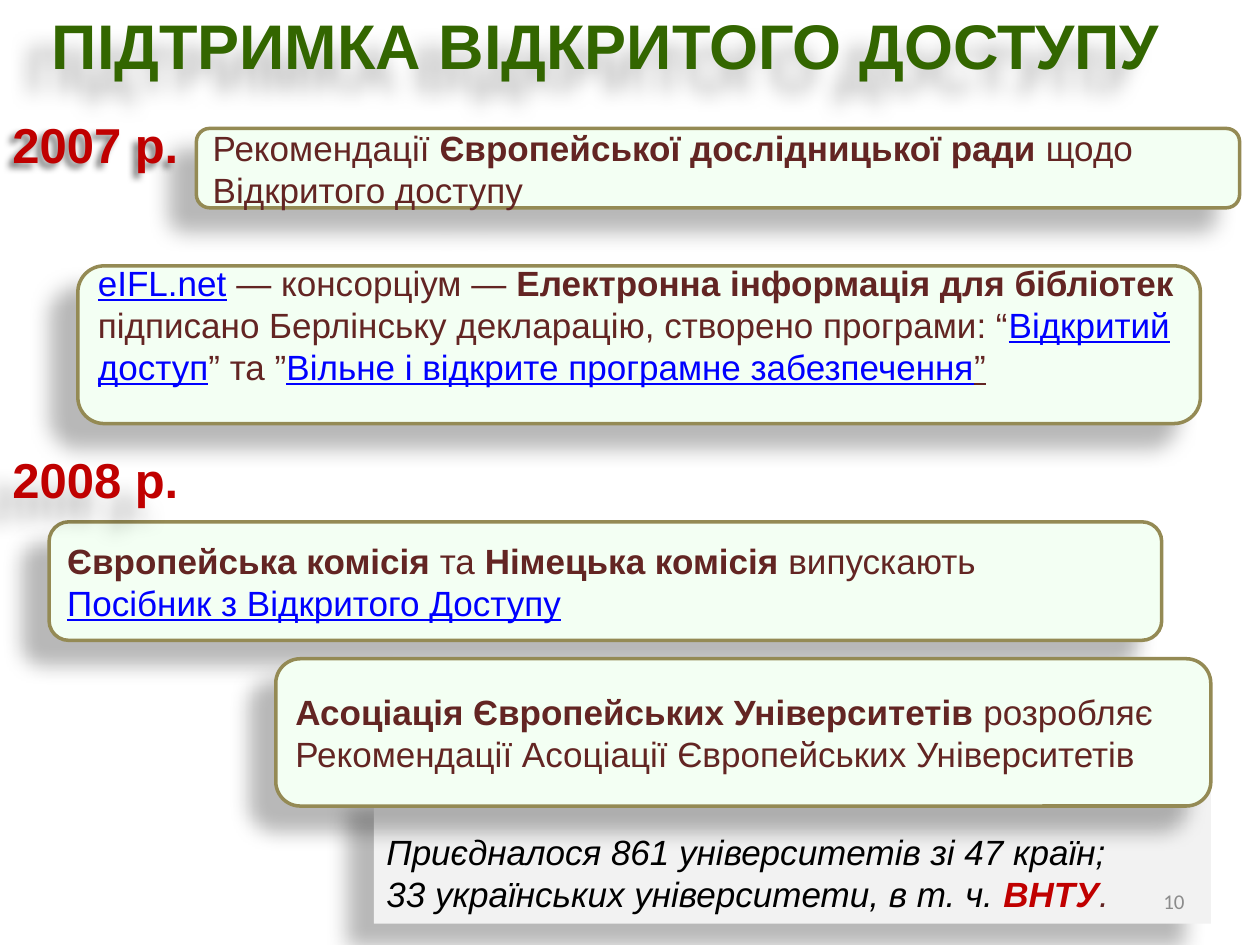
from lxml import etree
from pptx import Presentation
from pptx.dml.color import RGBColor
from pptx.enum.shapes import MSO_SHAPE
from pptx.enum.text import MSO_ANCHOR, MSO_AUTO_SIZE, PP_ALIGN
from pptx.oxml.ns import qn
from pptx.util import Cm, Pt

RECTANGLE = MSO_SHAPE.RECTANGLE
ROUNDED = MSO_SHAPE.ROUNDED_RECTANGLE
TOP, MIDDLE = MSO_ANCHOR.TOP, MSO_ANCHOR.MIDDLE
LEFT, RIGHT = PP_ALIGN.LEFT, PP_ALIGN.RIGHT
NO_FIT = MSO_AUTO_SIZE.NONE

GREEN = RGBColor(0x33, 0x66, 0x00)
RED = RGBColor(0xC0, 0x00, 0x00)
BROWN = RGBColor(0x63, 0x25, 0x23)
BLUE = RGBColor(0x00, 0x00, 0xFF)
BLACK = RGBColor(0x00, 0x00, 0x00)
GREY = RGBColor(0x8C, 0x8C, 0x8C)
PALE_GREY = RGBColor(0xF2, 0xF2, 0xF2)
MINT = RGBColor(0xF3, 0xFF, 0xF3)
OLIVE = RGBColor(0x94, 0x8A, 0x54)

PLAIN = {}
BOLD = {"bold": True}
LINK = {"color": BLUE, "underline": True}
UNDERLINED = {"underline": True}
ITALIC = {"color": BLACK, "italic": True}


class SlideBuilder:
    font = "Arial"
    body_size = 20

    def __init__(self, page):
        self.page = page

    def place(self, shape, left, top, width, height):
        shape.left, shape.top = Cm(left), Cm(top)
        shape.width, shape.height = Cm(width), Cm(height)

    def add_shadow(self, shape, blur=11.8, distance=19.7, opacity=28):
        shape.shadow.inherit = False
        effects = shape._element.spPr.find(qn("a:effectLst"))
        shadow = etree.SubElement(
            effects, qn("a:outerShdw"), blurRad=str(Pt(blur)),
            dist=str(Pt(distance)), dir=str(141 * 60000),
            algn="ctr", rotWithShape="0")
        color = etree.SubElement(shadow, qn("a:srgbClr"), val="000000")
        etree.SubElement(color, qn("a:alpha"), val=str(opacity * 1000))

    def add_text(self, shape, paragraphs, size=body_size, anchor=TOP,
                 align=LEFT, font=font, wrap=True):
        frame = shape.text_frame
        frame.word_wrap = wrap
        frame.auto_size = NO_FIT
        frame.vertical_anchor = anchor
        for index, spans in enumerate(paragraphs):
            para = frame.add_paragraph() if index else frame.paragraphs[0]
            para.alignment = align
            for text, style in spans:
                span = para.add_run()
                span.text = text
                span.font.name = font
                span.font.size = Pt(size)
                span.font.bold = style.get("bold", False)
                span.font.italic = style.get("italic", False)
                span.font.underline = style.get("underline", False)
                span.font.color.rgb = style.get("color", BROWN)

    def title(self, text, *bounds):
        shape = self.page.shapes.title
        self.place(shape, *bounds)
        self.add_text(shape, [[(text, {"color": GREEN, "bold": True})]],
                      size=36)
        self.add_shadow(shape)

    def label(self, text, *bounds, size=28, style=PLAIN, **options):
        box = self.page.shapes.add_textbox(*map(Cm, bounds))
        self.add_text(box, [[(text, style)]], size=size, **options)
        return box

    def year(self, text, *bounds, wrap=True, **shadow):
        box = self.label(text, *bounds, wrap=wrap,
                         style={"color": RED, "bold": True})
        self.add_shadow(box, **shadow)

    def panel(self, kind, bounds, paragraphs, fill, anchor):
        shape = self.page.shapes.add_shape(kind, *map(Cm, bounds))
        shape.fill.solid()
        shape.fill.fore_color.rgb = fill
        shape.line.fill.background()
        self.add_shadow(shape)
        self.add_text(shape, paragraphs, anchor=anchor)
        return shape

    def card(self, bounds, paragraphs):
        shape = self.panel(ROUNDED, bounds, paragraphs, MINT, MIDDLE)
        shape.line.color.rgb = OLIVE
        shape.line.width = Pt(2)
        return shape

    def note(self, bounds, paragraphs):
        return self.panel(RECTANGLE, bounds, paragraphs, PALE_GREY, TOP)


def main():
    deck = Presentation()
    deck.slide_width, deck.slide_height = Cm(25.4), Cm(19.05)
    page = deck.slides.add_slide(deck.slide_layouts[5])
    builder = SlideBuilder(page)

    builder.title("ПІДТРИМКА ВІДКРИТОГО ДОСТУПУ", 0.79, 0, 24.18, 1.8)

    universities = builder.note((7.54, 15.88, 16.87, 2.74), [
        [("Приєдналося 861 університетів зі 47 країн;", ITALIC)],
        [("33 українських університети, в т. ч. ", ITALIC),
         ("ВНТУ", {"color": RED, "bold": True, "italic": True}),
         (".", {"italic": True})],
    ])
    universities.text_frame.margin_top = Cm(0.86)

    builder.card((3.96, 2.59, 21.03, 1.6), [
        [("Рекомендації ", PLAIN),
         ("Європейської дослідницької ради ", BOLD),
         ("щодо Відкритого доступу", PLAIN)],
    ])
    builder.card((0.99, 10.52, 22.43, 2.39), [
        [("Європейська комісія ", BOLD), ("та ", PLAIN),
         ("Німецька комісія ", BOLD), ("випускають", PLAIN)],
        [("Посібник з Відкритого Доступу", LINK)],
    ])
    builder.card((5.56, 13.28, 18.85, 2.97), [
        [("Асоціація Європейських Університетів ", BOLD),
         ("розробляє Рекомендації Асоціації Європейських Університетів",
          PLAIN)],
    ])

    builder.year("2008 р.", 0, 8.94, 4.95, 1.45)
    builder.year("2007 р.", 0, 2.18, 3.91, 1.45, wrap=False,
                 blur=4, distance=4, opacity=50)

    consortium = builder.card((1.57, 5.36, 22.63, 3.18), [
        [("eIFL.net", LINK), (" — консорціум — ", PLAIN),
         ("Електронна інформація для бібліотек ", BOLD),
         ("підписано Берлінську декларацію, створено програми: “", PLAIN),
         ("Відкритий доступ", LINK), ("” та ”", PLAIN),
         ("Вільне і відкрите програмне забезпечення", LINK),
         ("”", UNDERLINED)],
    ])
    consortium.text_frame.margin_bottom = Cm(0.94)

    builder.label("10", 18.21, 17.65, 5.92, 1.02, size=12, font="Calibri",
                  style={"color": GREY}, anchor=MIDDLE, align=RIGHT)

    deck.save("out.pptx")


if __name__ == "__main__":
    main()
